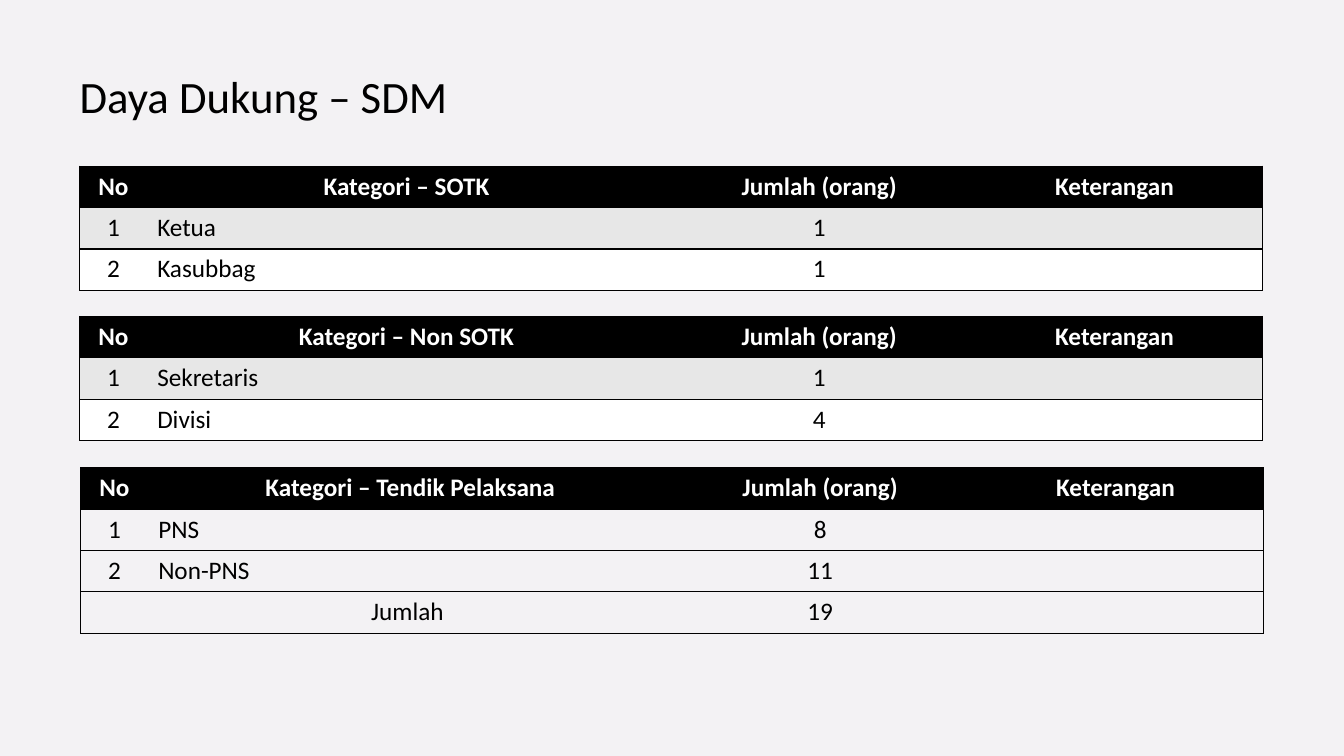
from dataclasses import dataclass

from lxml.etree import SubElement
from pptx import Presentation
from pptx.dml.color import RGBColor
from pptx.enum.text import MSO_ANCHOR, PP_ALIGN
from pptx.oxml.ns import qn
from pptx.util import Inches, Pt


@dataclass(frozen=True)
class Theme:
    font: str = "Calibri"
    title_size: int = 32
    table_size: int = 18
    background: str = "F3F2F4"
    ink: str = "000000"
    header_text: str = "FFFFFF"
    band: str = "E7E7E7"
    plain: str = "FFFFFF"


THEME = Theme()
LEFT, WIDTH, ROW_HEIGHT = 0.79, 11.73, 0.41
COLUMN_WIDTHS = (0.67, 5.2, 2.93, 2.93)
CATEGORY_COLUMN = 1
STRIPES = (THEME.band, THEME.plain)
UNFILLED = (None, None, None)

STAFF_TABLES = (
    (LEFT, 1.65, "Kategori – SOTK ", STRIPES, 1,
     (("1", "Ketua", "1"), ("2", "Kasubbag", "1"))),
    (LEFT, 3.14, "Kategori – Non SOTK ", STRIPES, 1,
     (("1", "Sekretaris", "1"), ("2", "Divisi", "4"))),
    (0.8, 4.64, "Kategori – Tendik Pelaksana", UNFILLED, 0.5,
     (("1", "PNS", "8"), ("2", "Non-PNS", "11"), ("", "Jumlah ", "19"))),
)


def style_text(paragraph, size, color, bold=False):
    for run in paragraph.runs:
        run.font.name = THEME.font
        run.font.size = Pt(size)
        run.font.bold = bold
        run.font.color.rgb = RGBColor.from_string(color)


def add_title(slide, wording):
    title = slide.shapes.add_textbox(
        Inches(LEFT), Inches(0.68), Inches(WIDTH), Inches(1.62))
    frame = title.text_frame
    frame.word_wrap = True
    frame.vertical_anchor = MSO_ANCHOR.TOP
    frame.margin_left = frame.margin_right = 0
    frame.margin_top = frame.margin_bottom = 0
    frame.text = wording
    style_text(frame.paragraphs[0], THEME.title_size, THEME.ink)


def set_borders(cell, column, weight):
    visible = {
        "a:lnL": column == 0,
        "a:lnR": column == len(COLUMN_WIDTHS) - 1,
        "a:lnT": True,
        "a:lnB": True,
    }
    properties = cell._tc.get_or_add_tcPr()
    for side, drawn in visible.items():
        border = SubElement(properties, qn(side), w=str(Pt(weight)))
        if drawn:
            paint = SubElement(border, qn("a:solidFill"))
            SubElement(paint, qn("a:srgbClr"), val=THEME.ink)
        else:
            SubElement(border, qn("a:noFill"))


def fill_cell(cell, color):
    if color is None:
        cell.fill.background()
    else:
        cell.fill.solid()
        cell.fill.fore_color.rgb = RGBColor.from_string(color)


def add_staff_table(slide, left, top, category, body_fills, weight, staff):
    header = ("No", category, "Jumlah (orang)", "Keterangan")
    rows = (header, *((*entry, "") for entry in staff))
    fills = (THEME.ink, *body_fills)
    table = slide.shapes.add_table(
        len(rows), len(header), Inches(left), Inches(top),
        Inches(WIDTH), Inches(ROW_HEIGHT * len(rows))).table
    table.horz_banding = False
    for column, width in zip(table.columns, COLUMN_WIDTHS):
        column.width = Inches(width)
    for row_number, (row, fill) in enumerate(zip(rows, fills)):
        is_header = row_number == 0
        color = THEME.header_text if is_header else THEME.ink
        for column_number, wording in enumerate(row):
            cell = table.cell(row_number, column_number)
            set_borders(cell, column_number, weight)
            fill_cell(cell, fill)
            cell.text_frame.text = wording
            paragraph = cell.text_frame.paragraphs[0]
            is_name = column_number == CATEGORY_COLUMN and row[0].isdigit()
            paragraph.alignment = PP_ALIGN.LEFT if is_name else PP_ALIGN.CENTER
            style_text(paragraph, THEME.table_size, color, is_header)


def main():
    presentation = Presentation()
    presentation.slide_width = Inches(13.33)
    presentation.slide_height = Inches(7.5)
    slide = presentation.slides.add_slide(presentation.slide_layouts[6])
    slide.background.fill.solid()
    slide.background.fill.fore_color.rgb = RGBColor.from_string(THEME.background)
    add_title(slide, "Daya Dukung – SDM")
    for staff_table in STAFF_TABLES:
        add_staff_table(slide, *staff_table)
    presentation.save("out.pptx")


if __name__ == "__main__":
    main()
